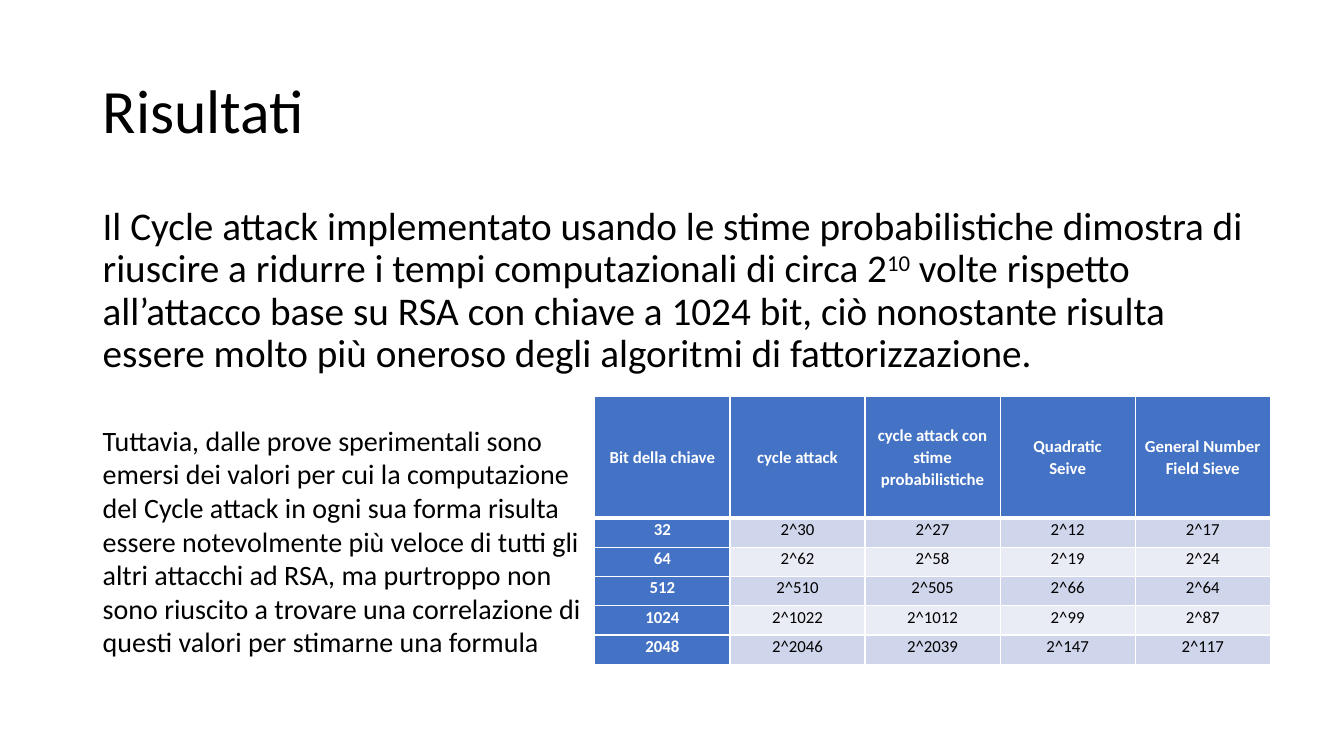
from lxml import etree
from pptx import Presentation
from pptx.dml.color import RGBColor
from pptx.enum.text import MSO_ANCHOR, PP_ALIGN
from pptx.oxml.ns import qn
from pptx.util import Inches, Pt

TOP, MIDDLE = MSO_ANCHOR.TOP, MSO_ANCHOR.MIDDLE
CENTER = PP_ALIGN.CENTER
BLACK = RGBColor(0x00, 0x00, 0x00)
WHITE = RGBColor(0xFF, 0xFF, 0xFF)
BLUE = RGBColor(0x44, 0x72, 0xC4)
BANDS = RGBColor(0xCF, 0xD5, 0xEA), RGBColor(0xE9, 0xEB, 0xF5)
FONT = "Calibri"

TITLE = "Risultati"
RESULT = [
    ("Il Cycle attack implementato usando le stime probabilistiche dimostra "
     "di riuscire a ridurre i tempi computazionali di circa 2", False),
    ("10", True),
    (" volte rispetto all’attacco base su RSA con chiave a 1024 bit, ciò "
     "nonostante risulta essere molto più oneroso degli algoritmi di "
     "fattorizzazione.", False),
]
REMARK = (
    "Tuttavia, dalle prove sperimentali sono emersi dei valori per cui la "
    "computazione del Cycle attack in ogni sua forma risulta essere "
    "notevolmente più veloce di tutti gli altri attacchi ad RSA, ma purtroppo "
    "non sono riuscito a trovare una correlazione di questi valori per "
    "stimarne una formula"
)
HEADS = ["Bit della chiave", "cycle attack",
         "cycle attack con stime probabilistiche",
         "Quadratic\nSeive", "General Number Field Sieve"]
# Key length, then the power of two that each attack costs
COSTS = [
    (32, 30, 27, 12, 17),
    (64, 62, 58, 19, 24),
    (512, 510, 505, 66, 64),
    (1024, 1022, 1012, 99, 87),
    (2048, 2046, 2039, 147, 117),
]


def apply(item, form):
    for name, value in form.items():
        setattr(item, name, value)


def style(font, size, color=BLACK, bold=False):
    apply(font, {"name": FONT, "size": Pt(size), "bold": bold})
    font.color.rgb = color


def add_text(slide, box, parts, size, anchor=TOP, form=None):
    """Add one paragraph made of (text, raised) parts."""
    frame = slide.shapes.add_textbox(*map(Inches, box)).text_frame
    apply(frame, {"word_wrap": True, "vertical_anchor": anchor})
    para = frame.paragraphs[0]
    apply(para, form or {})
    for text, raised in parts:
        run = para.add_run()
        run.text = text
        style(run.font, size)
        if raised:
            run.font._element.set("baseline", "30000")


def add_edges(cell, widths):
    """Draw white edges from a dict of side letter to width in points."""
    props = cell._tc.get_or_add_tcPr()
    for side, width in widths.items():
        line = etree.SubElement(props, qn(f"a:ln{side}"), w=str(Pt(width)))
        fill = etree.SubElement(line, qn("a:solidFill"))
        etree.SubElement(fill, qn("a:srgbClr"), val=str(WHITE))


def fill_cell(cell, text, fill, strong, anchor, edges):
    apply(cell, {"text": text, "vertical_anchor": anchor,
                 "margin_left": Inches(0.07), "margin_right": Inches(0.07),
                 "margin_top": 0, "margin_bottom": 0})
    for para in cell.text_frame.paragraphs:
        apply(para, {"alignment": CENTER, "line_spacing": 1.07})
        for run in para.runs:
            style(run.font, 12, WHITE if strong else BLACK, strong)
    add_edges(cell, edges)
    cell.fill.solid()
    cell.fill.fore_color.rgb = fill


def add_costs(slide, box):
    rows = [HEADS] + [[str(bits)] + [f"2^{power}" for power in powers]
                      for bits, *powers in COSTS]
    table = slide.shapes.add_table(
        len(rows), len(HEADS), *map(Inches, box)).table
    for col in table.columns:
        col.width = Inches(box[2] / len(HEADS))
    for r, texts in enumerate(rows):
        head = r == 0
        table.rows[r].height = Inches(1.21 if head else 0.29)
        edges = {"L": 1, "R": 1, "T": 3 if r == 1 else 1, "B": 3 if head else 1}
        for c, text in enumerate(texts):
            strong = head or c == 0
            fill = BLUE if strong else BANDS[(r - 1) % 2]
            fill_cell(table.cell(r, c), text, fill, strong,
                      MIDDLE if head else TOP, edges)


def main():
    deck = Presentation()
    apply(deck, {"slide_width": Inches(13.33), "slide_height": Inches(7.5)})
    slide = deck.slides.add_slide(deck.slide_layouts[6])
    add_text(slide, (0.92, 0.4, 11.5, 1.45), [(TITLE, False)], 44, MIDDLE,
             {"line_spacing": 0.9})
    add_text(slide, (0.92, 2, 11.5, 1.99), RESULT, 28,
             form={"line_spacing": 0.9, "space_before": Pt(10)})
    add_costs(slide, (5.9, 3.93, 6.7, 2.68))
    add_text(slide, (0.92, 4.15, 5.17, 2.46), [(REMARK, False)], 20)
    deck.save("out.pptx")


if __name__ == "__main__":
    main()
